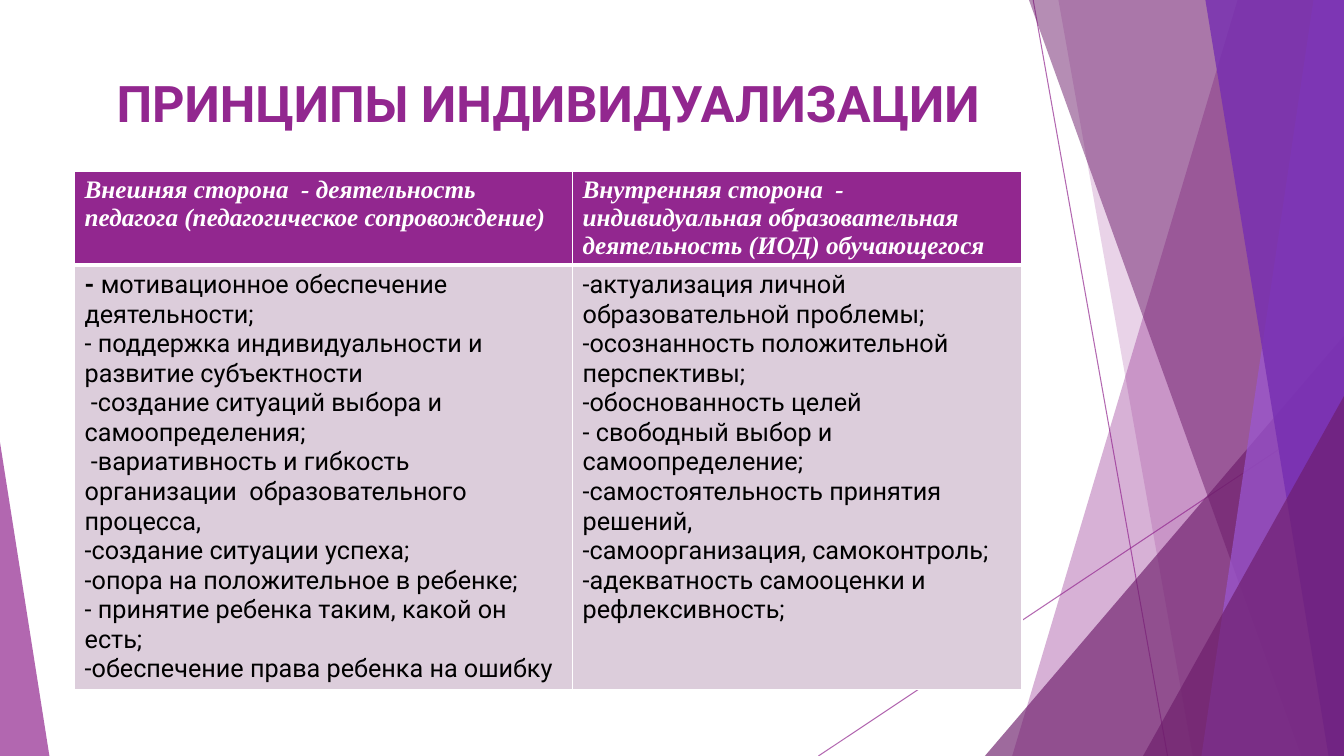
from lxml.etree import SubElement
from pptx import Presentation
from pptx.dml.color import RGBColor
from pptx.enum.shapes import MSO_CONNECTOR, MSO_SHAPE
from pptx.enum.text import MSO_ANCHOR, PP_ALIGN
from pptx.oxml.ns import qn
from pptx.util import Pt

# Content
TITLE = "ПРИНЦИПЫ ИНДИВИДУАЛИЗАЦИИ"
HEADERS = [
    "Внешняя сторона  - деятельность педагога (педагогическое сопровождение)",
    "Внутренняя сторона  - индивидуальная образовательная деятельность (ИОД) обучающегося",
]
TEACHER_SIDE = [
    "- мотивационное обеспечение деятельности;",
    "- поддержка индивидуальности и развитие субъектности",
    " -создание ситуаций выбора и самоопределения;",
    " -вариативность и гибкость организации  образовательного процесса,",
    "-создание ситуации успеха;",
    "-опора на положительное в ребенке;",
    "- принятие ребенка таким, какой он есть;",
    "-обеспечение права ребенка на ошибку",
]
STUDENT_SIDE = [
    "-актуализация личной  образовательной проблемы;",
    "-осознанность положительной перспективы;",
    "-обоснованность целей",
    "- свободный выбор и самоопределение;",
    "-самостоятельность принятия решений,",
    "-самоорганизация, самоконтроль;",
    "-адекватность самооценки и рефлексивность;",
]

# Geometry and colours
WIDTH, HEIGHT = 960, 540
LEFT, TABLE_TOP = 53.3, 122.4
COLUMN_WIDTHS, ROW_HEIGHTS = (355.7, 321.1), (67, 303)
PURPLE, DARK, LILAC, VIOLET = "92278F", "6D1D6B", "9B57D3", "762EB1"
WHITE, BLACK, PALE = "FFFFFF", "000000", "DCCDDB"

# Decoration, back to front
LINES = [(738, 0, 834, HEIGHT), (WIDTH, 290, 584.6, HEIGHT)]
# band: left edge at top, left edge at bottom; triangle: left, top, width, apex
DECORATION = [
    ("band", (884, 723), PURPLE, 36),
    ("band", (756, 852), PURPLE, 20),
    ("triangle", (703.5, 239.8, 256.5, 1), DARK, 66),
    ("band", (735, 929.5), DARK, 50),
    ("band", (938.2, 858.2), LILAC, 70),
    ("band", (861, 949), VIOLET, 80),
    ("triangle", (816.5, 283, 143.5, 1), DARK, 66),
    ("triangle", (0, 316, 35.3, 0), PURPLE, 70),
]


def rgb(color):
    return RGBColor.from_string(color)


def set_alpha(element, percent):
    for color in element.iter(qn("a:srgbClr")):
        SubElement(color, qn("a:alpha"), val=str(percent * 1000))


def add_line(shapes, x1, y1, x2, y2):
    line = shapes.add_connector(MSO_CONNECTOR.STRAIGHT, Pt(x1), Pt(y1), Pt(x2), Pt(y2))
    line.line.color.rgb = rgb(PURPLE)
    line.line.width = Pt(0.75)
    properties = line._element.spPr
    set_alpha(properties, 70)
    SubElement(properties, qn("a:effectLst"))


def add_decoration(shapes, kind, geometry, color, alpha):
    if kind == "band":
        top_x, bottom_x = geometry
        builder = shapes.build_freeform(Pt(top_x), 0)
        corners = [(WIDTH, 0), (WIDTH, HEIGHT), (bottom_x, HEIGHT)]
        builder.add_line_segments([(Pt(x), Pt(y)) for x, y in corners])
        shape = builder.convert_to_shape()
    else:
        left, top, width, apex = geometry
        shape = shapes.add_shape(MSO_SHAPE.ISOSCELES_TRIANGLE, Pt(left), Pt(top),
                                 Pt(width), Pt(HEIGHT - top))
        shape.adjustments[0] = apex
    shape.shadow.inherit = False
    shape.fill.solid()
    shape.fill.fore_color.rgb = rgb(color)
    set_alpha(shape._element.spPr, alpha)
    shape.line.fill.background()


def set_borders(cell, bottom):
    properties = cell._tc.get_or_add_tcPr()
    for index, (side, width) in enumerate([("L", 1), ("R", 1), ("T", 1), ("B", bottom)]):
        border = SubElement(properties, qn(f"a:ln{side}"), w=str(Pt(width)))
        SubElement(SubElement(border, qn("a:solidFill")), qn("a:srgbClr"), val=WHITE)
        properties.insert(index, border)  # borders come before the fill


def fill_cell(cell, lines, is_header):
    cell.fill.solid()
    cell.fill.fore_color.rgb = rgb(PURPLE if is_header else PALE)
    set_borders(cell, 3 if is_header else 1)
    cell.text_frame.text = "\n".join(lines)
    for paragraph in cell.text_frame.paragraphs:
        font = paragraph.font
        font.name = "Times New Roman" if is_header else "Roboto"
        font.size = Pt(18)
        font.bold = font.italic = is_header
        font.color.rgb = rgb(WHITE if is_header else BLACK)


def main():
    presentation = Presentation()
    presentation.slide_width, presentation.slide_height = Pt(WIDTH), Pt(HEIGHT)
    slide = presentation.slides.add_slide(presentation.slide_layouts[5])
    shapes = slide.shapes
    title = shapes.title

    for line in LINES:
        add_line(shapes, *line)
    for item in DECORATION:
        add_decoration(shapes, *item)

    # Title, in front of the decoration
    shapes._spTree.append(title._element)
    title.left, title.top = Pt(LEFT), Pt(48.2)
    title.width, title.height = Pt(sum(COLUMN_WIDTHS)), Pt(62.6)
    title.text_frame.text = TITLE
    title.text_frame.vertical_anchor = MSO_ANCHOR.TOP
    paragraph = title.text_frame.paragraphs[0]
    paragraph.alignment = PP_ALIGN.CENTER
    paragraph.font.name, paragraph.font.size = "Roboto", Pt(36)
    paragraph.font.bold = True
    paragraph.font.color.rgb = rgb(PURPLE)

    # Table
    table = shapes.add_table(2, 2, Pt(LEFT), Pt(TABLE_TOP), Pt(sum(COLUMN_WIDTHS)),
                             Pt(sum(ROW_HEIGHTS))).table
    table.horz_banding = False
    for row, height in zip(table.rows, ROW_HEIGHTS):
        row.height = Pt(height)
    for index, (header, body) in enumerate(zip(HEADERS, [TEACHER_SIDE, STUDENT_SIDE])):
        table.columns[index].width = Pt(COLUMN_WIDTHS[index])
        fill_cell(table.cell(0, index), [header], True)
        fill_cell(table.cell(1, index), body, False)

    # The first dash is bold
    first = table.cell(1, 0).text_frame.paragraphs[0]
    dash, rest = first.runs[0], first.add_run()
    dash.text, rest.text = TEACHER_SIDE[0][:2], TEACHER_SIDE[0][2:]
    dash.font.bold = True

    presentation.save("out.pptx")


if __name__ == "__main__":
    main()
